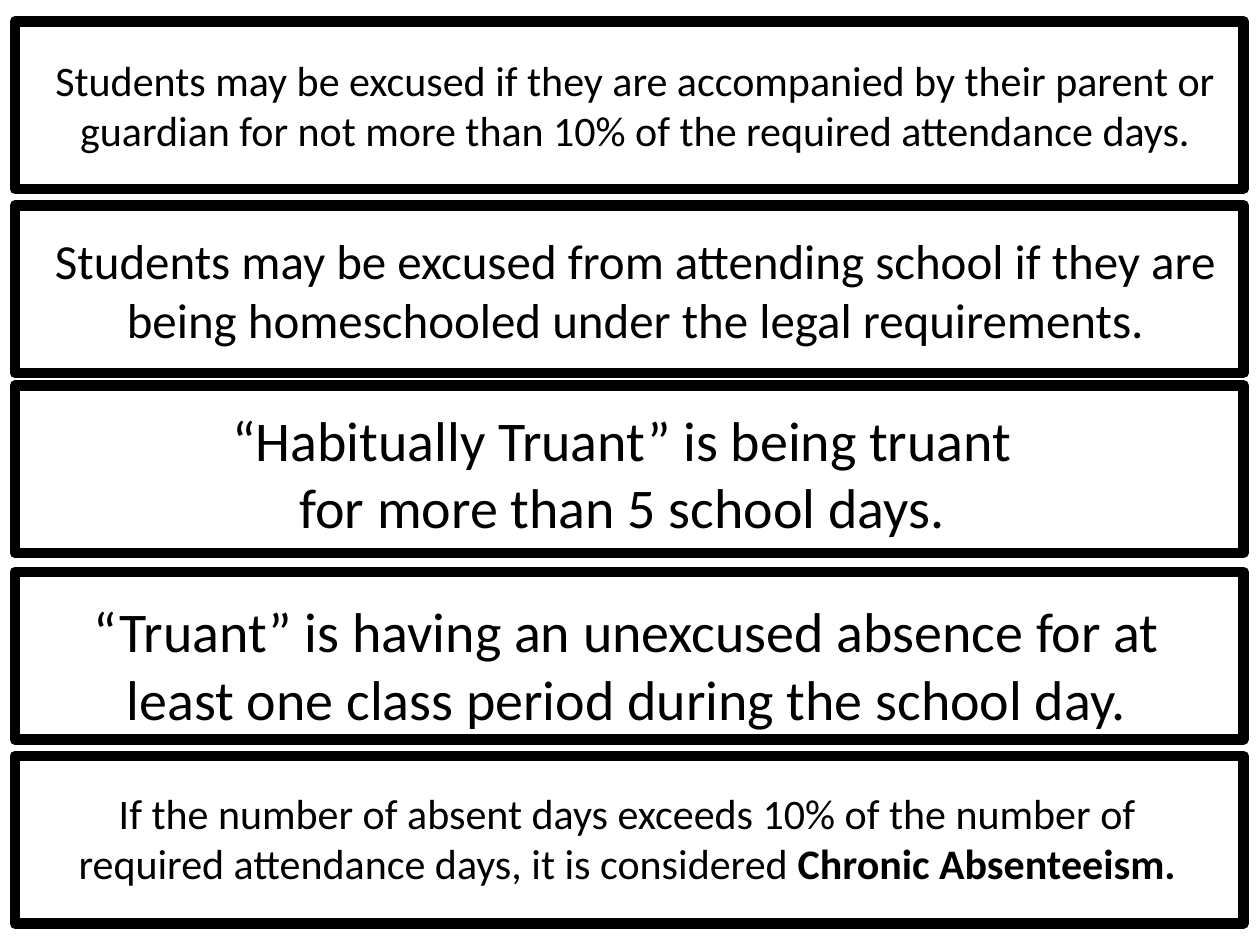
from dataclasses import dataclass

from pptx import Presentation
from pptx.dml.color import RGBColor
from pptx.enum.shapes import MSO_SHAPE
from pptx.enum.text import MSO_AUTO_SIZE, PP_ALIGN
from pptx.slide import Slide
from pptx.util import Cm, Pt


def color(hex_string):
    return RGBColor.from_string(hex_string)


@dataclass
class AttendanceSlide:
    slide: Slide
    font: str = "Calibri"
    ink: str = "000000"
    paper: str = "FFFFFF"
    border: float = 6

    def frame(self, top):
        shape = self.slide.shapes.add_shape(
            MSO_SHAPE.RECTANGLE, Cm(0.3), Cm(top), Cm(24.77), Cm(3.38))
        shape.shadow.inherit = False
        shape.fill.solid()
        shape.fill.fore_color.rgb = color(self.paper)
        shape.line.color.rgb = color(self.ink)
        shape.line.width = Pt(self.border)

    def statement(self, left, top, height, size, paragraphs):
        """Add centred text; each paragraph is a list of (text, bold) runs."""
        box = self.slide.shapes.add_textbox(Cm(left), Cm(top), Cm(24.13), Cm(height))
        text_frame = box.text_frame
        text_frame.word_wrap = True
        text_frame.auto_size = MSO_AUTO_SIZE.SHAPE_TO_FIT_TEXT
        for index, runs in enumerate(paragraphs):
            paragraph = text_frame.add_paragraph() if index else text_frame.paragraphs[0]
            paragraph.alignment = PP_ALIGN.CENTER
            paragraph.font.name = self.font
            paragraph.font.size = Pt(size)
            paragraph.font.color.rgb = color(self.ink)
            for text, bold in runs:
                run = paragraph.add_run()
                run.text = text
                if bold:
                    run.font.bold = True


FRAME_TOPS = [0.43, 4.14, 7.77, 11.53, 15.24]

# left, top, height (cm), font size (pt), paragraphs
STATEMENTS = [
    (0.74, 0.97, 2.31, 24, [[
        ("Students may be excused if they are accompanied by their parent or "
         "guardian for not more than 10% of the required attendance days.", False)]]),
    (0.74, 4.52, 2.64, 28, [[
        ("Students may be excused from attending school if they are "
         "being homeschooled under the legal requirements.", False)]]),
    (0.61, 8.05, 3, 32, [
        [("“Habitually Truant” is being truant ", False)],
        [("for more than 5 school days. ", False)]]),
    (0.58, 11.91, 3, 32, [[
        ("“Truant” is having an unexcused absence for at least one class "
         "period during the school day.", False)]]),
    (0.58, 15.75, 2.31, 24, [[
        ("If the number of absent days exceeds 10% of the number of "
         "required attendance days, it is considered ", False),
        ("Chronic Absenteeism.", True)]]),
]


def main():
    presentation = Presentation()
    presentation.slide_width = Cm(25.4)
    presentation.slide_height = Cm(19.05)
    blank_layout = presentation.slide_layouts[6]
    attendance = AttendanceSlide(presentation.slides.add_slide(blank_layout))
    for top in FRAME_TOPS:
        attendance.frame(top)
    for statement in STATEMENTS:
        attendance.statement(*statement)
    presentation.save("out.pptx")


if __name__ == "__main__":
    main()
